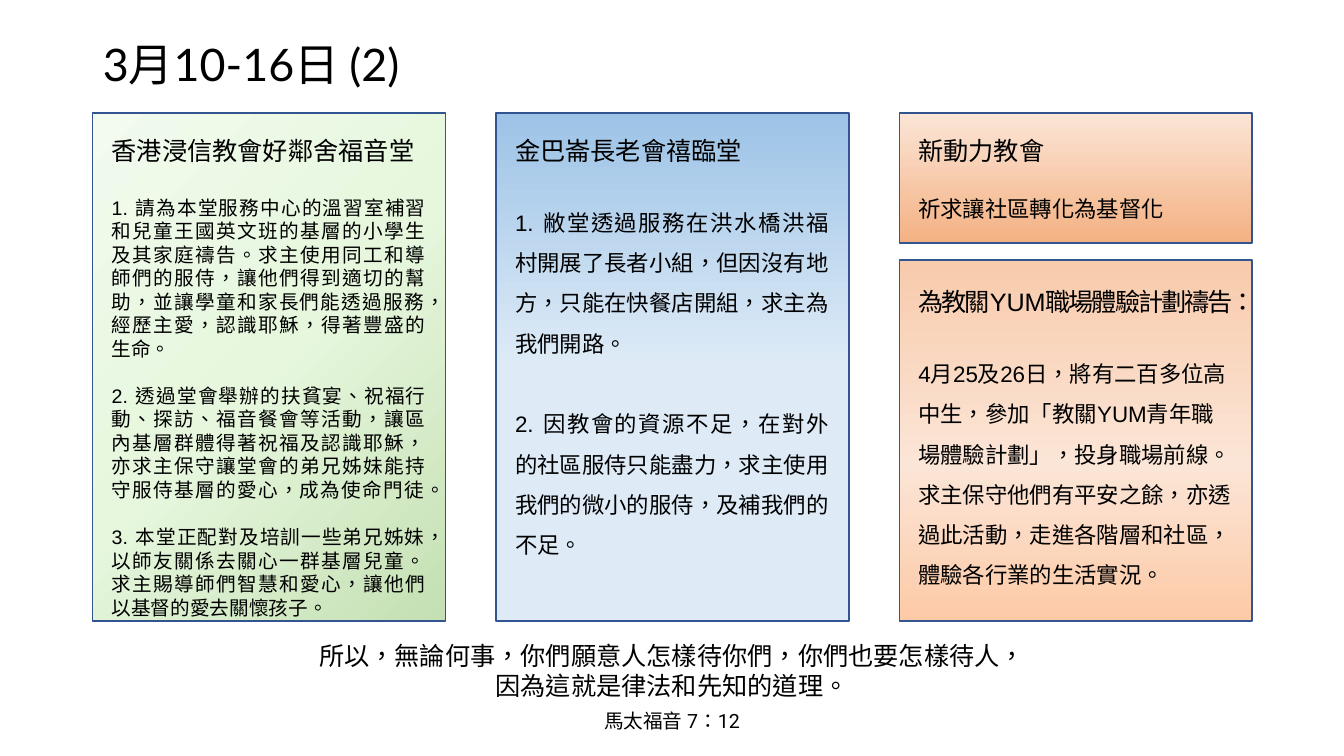
from copy import deepcopy

from pptx import Presentation
from pptx.dml.color import RGBColor
from pptx.enum import lang, shapes, text
from pptx.oxml.ns import qn
from pptx.util import Inches, Pt

BLACK = RGBColor(0x00, 0x00, 0x00)
BORDER = RGBColor(0x32, 0x54, 0x91)
GREEN = [(0, RGBColor(0xC5, 0xE0, 0xB4)), (0.5, RGBColor(0xE6, 0xF7, 0xDD)),
         (1, RGBColor(0xF2, 0xFB, 0xEE))]
BLUE = [(0, RGBColor(0x9D, 0xC3, 0xE6)), (0.5, RGBColor(0xDE, 0xEB, 0xF7)),
        (1, RGBColor(0xDC, 0xEB, 0xF8))]
ORANGE = [(0, RGBColor(0xF4, 0xB1, 0x83)), (1, RGBColor(0xFB, 0xE5, 0xD6))]
PEACH = [(0, RGBColor(0xF8, 0xCB, 0xAD)), (0.57, RGBColor(0xFB, 0xE5, 0xD6)),
         (1, RGBColor(0xFD, 0xCA, 0xA7))]
LEFT, CENTER, JUSTIFY = (text.PP_ALIGN.LEFT, text.PP_ALIGN.CENTER,
                         text.PP_ALIGN.JUSTIFY)
COLUMN_LEFT, COLUMN_STEP, CARD_WIDTH = 0.92, 4, 3.5
CARD_TOP, CARD_BOTTOM = 1.12, 6.16
HEADING_GAP = 21.6

HAVEN_PRAYERS = [
    "1. 請為本堂服務中心的溫習室補習和兒童王國英文班的基層的小學生及其家庭禱告。"
    "求主使用同工和導師們的服侍，讓他們得到適切的幫助，並讓學童和家長們能透過服務，"
    "經歷主愛，認識耶穌，得著豐盛的生命。",
    "2. 透過堂會舉辦的扶貧宴、祝福行動、探訪、福音餐會等活動，讓區內基層群體得著祝福及認識耶穌，"
    "亦求主保守讓堂會的弟兄姊妹能持守服侍基層的愛心，成為使命門徒。",
    "3. 本堂正配對及培訓一些弟兄姊妹，以師友關係去關心一群基層兒童。"
    "求主賜導師們智慧和愛心，讓他們以基督的愛去關懷孩子。",
]
CHURCH_PRAYERS = [
    "1. 敝堂透過服務在洪水橋洪福村開展了長者小組，但因沒有地方，只能在快餐店開組，求主為我們開路。",
    "2. 因教會的資源不足，在對外的社區服侍只能盡力，求主使用我們的微小的服侍，及補我們的不足。",
]
SCHEME_PRAYERS = [
    "4月25及26日，將有二百多位高中生，參加「教關YUM青年職場體驗計劃」，投身職場前線。"
    "求主保守他們有平安之餘，亦透過此活動，走進各階層和社區，體驗各行業的生活實況。",
]


def add_run(paragraph, words, size, font_name, tracking=0):
    """Add one black run to the paragraph."""
    run = paragraph.add_run()
    run.text = words
    run.font.size = Pt(size)
    run.font.name = font_name
    run.font.color.rgb = BLACK
    run.font.language_id = lang.MSO_LANGUAGE_ID.TRADITIONAL_CHINESE
    if tracking:
        run.font._element.set("spc", str(int(tracking * 100)))


def add_text_box(slide, left, top, width, height):
    """Add a wrapping text box and return its text frame."""
    frame = slide.shapes.add_textbox(
        Inches(left), Inches(top), Inches(width), Inches(height)).text_frame
    frame.word_wrap = True
    frame.auto_size = text.MSO_AUTO_SIZE.SHAPE_TO_FIT_TEXT
    return frame


def add_panel(slide, left, top, width, height, stops, angle):
    """Draw a bordered rectangle with a gradient at a clockwise angle."""
    panel = slide.shapes.add_shape(
        shapes.MSO_SHAPE.RECTANGLE,
        Inches(left), Inches(top), Inches(width), Inches(height))
    panel.shadow.inherit = False
    panel.line.color.rgb = BORDER
    panel.line.width = Pt(1)
    panel.fill.gradient()
    panel.fill.gradient_angle = 360 - angle
    stop_list = panel._element.spPr.find(".//" + qn("a:gsLst"))
    for _ in stops[2:]:
        stop_list.append(deepcopy(stop_list[0]))
    for stop, (position, color) in zip(panel.fill.gradient_stops, stops):
        stop.position = position
        stop.color.rgb = color


def add_card(slide, box, stops, angle, heading, prayers, size, text_height,
             spacing=1.0, alignment=JUSTIFY, inset=0.17):
    """Draw a prayer card: panel, heading runs and prayer paragraphs."""
    left, top, width, height = box
    add_panel(slide, left, top, width, height, stops, angle)
    frame = add_text_box(slide, left + 0.09, top + inset, width - 0.19, text_height)
    for words, tracking in heading:
        add_run(frame.paragraphs[0], words, 18, "Arial", tracking)
    gap = HEADING_GAP
    for prayer in prayers:
        paragraph = frame.add_paragraph()
        paragraph.alignment = alignment
        paragraph.line_spacing = spacing
        paragraph.space_before = Pt(gap)
        add_run(paragraph, prayer, size, "Arial")
        gap = size * 1.2 * spacing


def add_title(slide, left, top, width, height):
    """Place the date heading in the title placeholder."""
    title = slide.shapes.title
    title.left, title.top = Inches(left), Inches(top)
    title.width, title.height = Inches(width), Inches(height)
    title.text_frame.vertical_anchor = text.MSO_ANCHOR.MIDDLE
    paragraph = title.text_frame.paragraphs[0]
    paragraph.alignment = LEFT
    paragraph.line_spacing = 0.9
    add_run(paragraph, "3月10-16日 (2)", 32, "Lato")


def add_verse(slide, left, top, width, height):
    """Place the centred Bible verse and its reference."""
    frame = add_text_box(slide, left, top, width, height)
    frame.vertical_anchor = text.MSO_ANCHOR.BOTTOM
    verse = frame.paragraphs[0]
    verse.alignment = CENTER
    verse.space_after = Pt(6)
    add_run(verse, "所以，無論何事，你們願意人怎樣待你們，你們也要怎樣待人，", 18, "Roboto")
    verse.add_line_break()
    add_run(verse, "因為這就是律法和先知的道理。", 18, "Roboto")
    reference = frame.add_paragraph()
    reference.alignment = CENTER
    add_run(reference, "馬太福音 7：12", 14, "Roboto")


def card_box(column, top=CARD_TOP, bottom=CARD_BOTTOM):
    """Return the box of a card in the given column."""
    return COLUMN_LEFT + column * COLUMN_STEP, top, CARD_WIDTH, bottom - top


def build_prayer_slide(presentation):
    """Build the weekly prayer slide."""
    slide = presentation.slides.add_slide(presentation.slide_layouts[5])
    add_title(slide, 0.92, 0.3, 6.56, 0.72)
    add_card(slide, card_box(0), GREEN, 225, [("香港浸信教會好鄰舍福音堂", 0)],
             HAVEN_PRAYERS, 14, 4.71)
    add_card(slide, card_box(1), BLUE, 90, [("金巴崙長老會禧臨堂", 0)],
             CHURCH_PRAYERS, 16, 4.29, spacing=1.5)
    add_card(slide, card_box(2, bottom=2.41), ORANGE, 270, [("新動力教會", 0)],
             ["祈求讓社區轉化為基督化"], 16, 1.01, alignment=LEFT)
    add_card(slide, card_box(2, top=2.58), PEACH, 90,
             [("為教關", -1.5), ("YUM", 0), ("職場體驗計劃禱告：", -1.5)],
             SCHEME_PRAYERS, 16, 3.08, spacing=1.5, alignment=LEFT, inset=0.21)
    add_verse(slide, 2.11, 6.29, 9.11, 1.03)


def main():
    """Create and save the presentation."""
    presentation = Presentation()
    presentation.slide_width = Inches(13.33)
    presentation.slide_height = Inches(7.5)
    build_prayer_slide(presentation)
    presentation.save("out.pptx")


if __name__ == "__main__":
    main()
